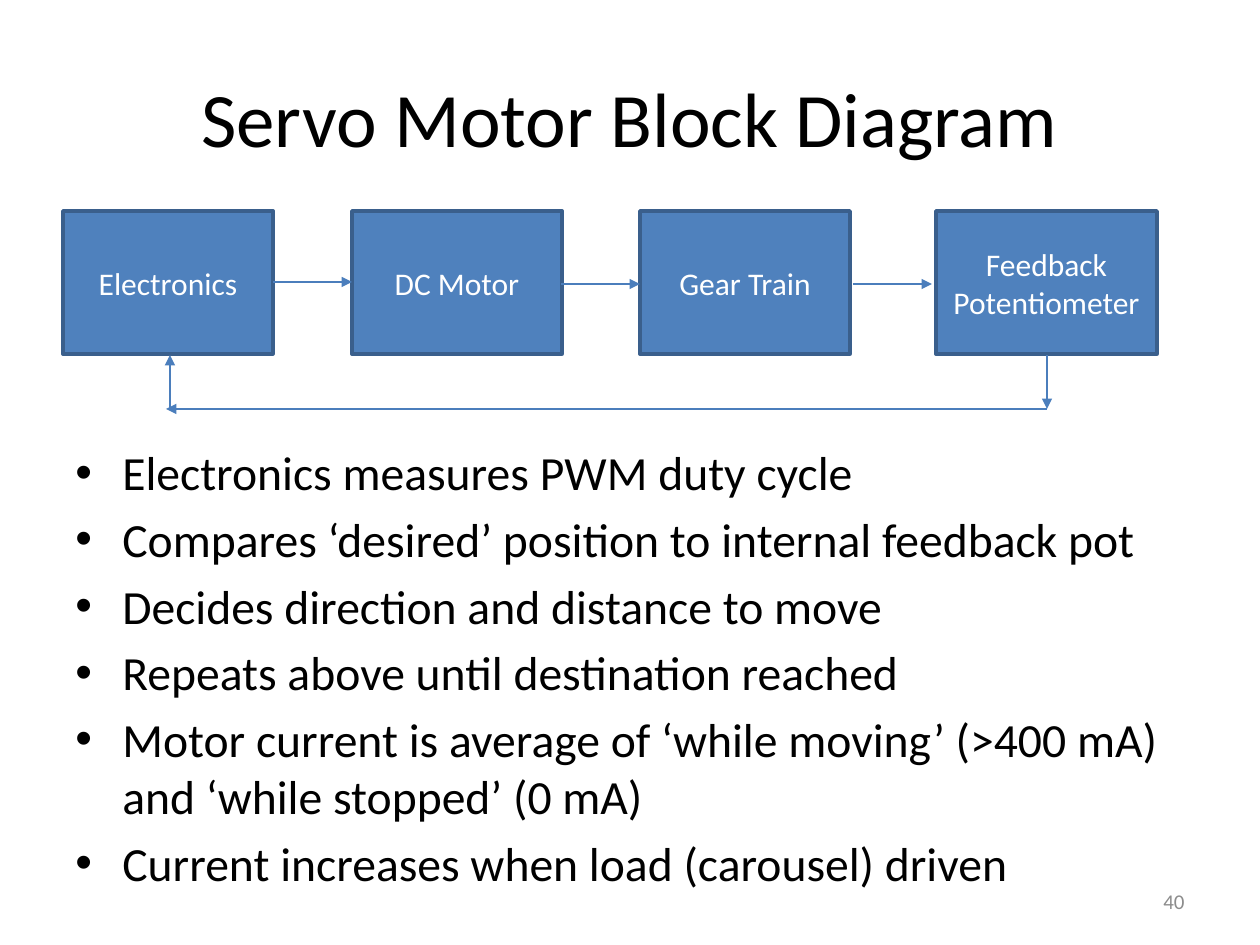
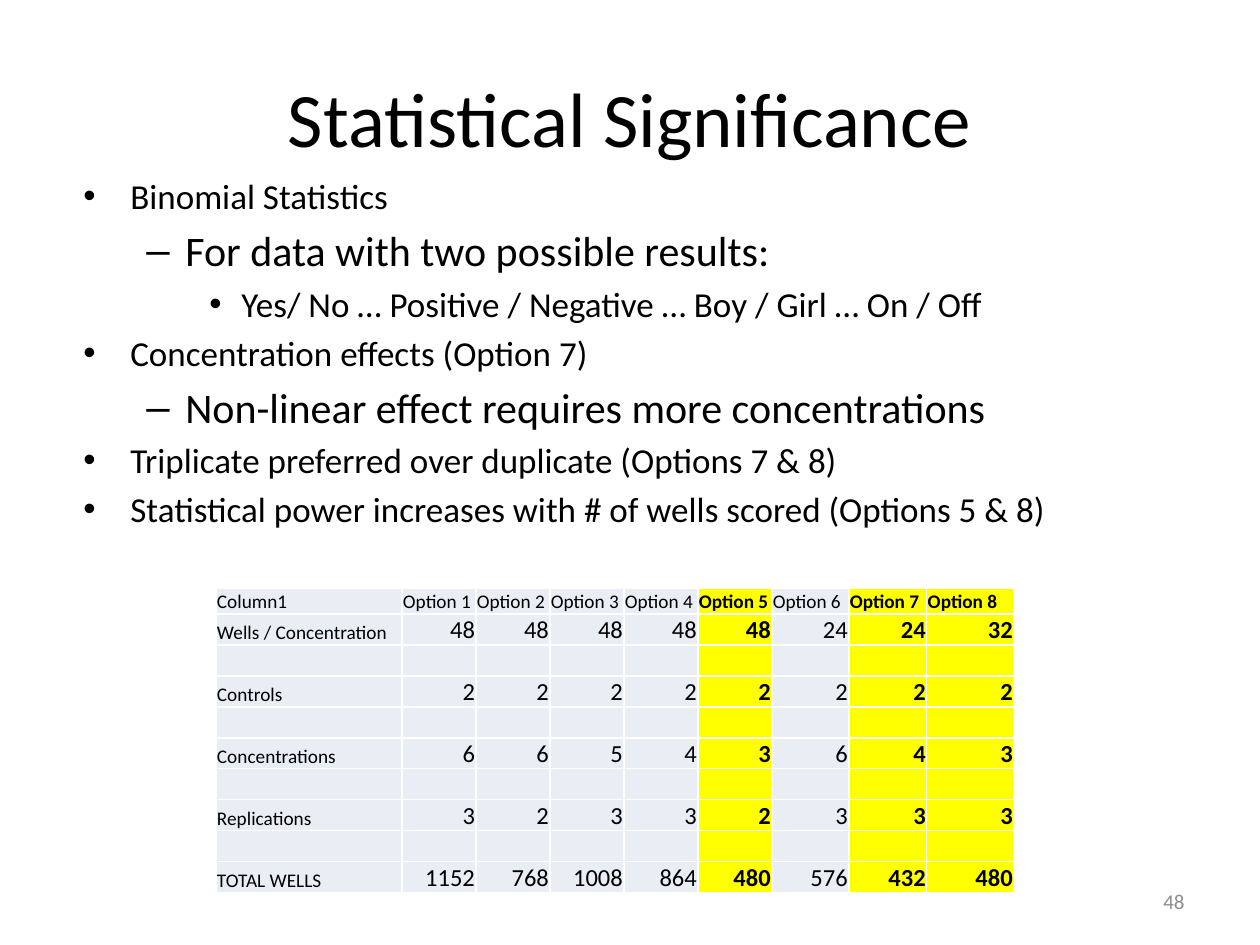
from lxml import etree
from pptx import Presentation
from pptx import util as u
from pptx.dml.color import RGBColor
from pptx.enum import shapes, text
from pptx.oxml import ns

PX = 914400 / 126
FONT = "Calibri"
BLACK = RGBColor(0x00, 0x00, 0x00)
WHITE = RGBColor(0xFF, 0xFF, 0xFF)
GREY = RGBColor(0x8C, 0x8C, 0x8C)
BLOCK_FILL = RGBColor(0x4F, 0x81, 0xBD)
BLOCK_LINE = RGBColor(0x3A, 0x5F, 0x8C)
ARROW = RGBColor(0x4B, 0x7E, 0xBC)
CELL_FILL = RGBColor(0xE9, 0xED, 0xF4)
HIGHLIGHT = RGBColor(0xFF, 0xFF, 0x00)

LEFT, CENTER, RIGHT = text.PP_ALIGN.LEFT, text.PP_ALIGN.CENTER, text.PP_ALIGN.RIGHT
TOP, MIDDLE = text.MSO_ANCHOR.TOP, text.MSO_ANCHOR.MIDDLE

BULLETS = [("•", 47, 47), ("–", 102, 39), ("•", 158, 32)]

BLOCKS = [("Electronics", 63, 210), ("DC Motor", 352, 210),
          ("Gear Train", 640, 210), ("Feedback Potentiometer", 936, 221)]
ARROWS = [(273, 282, 352, 282), (561, 284, 640, 284), (853, 284, 932, 284),
          (1047, 355, 1047, 409), (1047, 409, 166, 409), (170, 409, 170, 355)]
SERVO_POINTS = [(0, 27.2, point) for point in (
    "Electronics measures PWM duty cycle",
    "Compares ‘desired’ position to internal feedback pot",
    "Decides direction and distance to move",
    "Repeats above until destination reached",
    "Motor current is average of ‘while moving’ (>400 mA) and ‘while stopped’ (0 mA)",
    "Current increases when load (carousel) driven")]

STATISTICS_POINTS = [
    (0, 20, "Binomial Statistics"),
    (1, 24, "For data with two possible results:"),
    (2, 20, "Yes/ No … Positive / Negative … Boy / Girl … On / Off"),
    (0, 20, "Concentration effects (Option 7)"),
    (1, 24, "Non-linear effect requires more concentrations"),
    (0, 20, "Triplicate preferred over duplicate (Options 7 & 8)"),
    (0, 20, "Statistical power increases with # of wells scored (Options 5 & 8)")]
WELL_COUNTS = [
    ("Wells / Concentration", 48, 48, 48, 48, 48, 24, 24, 32),
    ("Controls", 2, 2, 2, 2, 2, 2, 2, 2),
    ("Concentrations", 6, 6, 5, 4, 3, 6, 4, 3),
    ("Replications", 3, 2, 3, 3, 2, 3, 3, 3),
    ("TOTAL WELLS", 1152, 768, 1008, 864, 480, 576, 432, 480)]
COLUMN_WIDTHS = [186] + [74] * 5 + [77, 78, 87]
PREFERRED_OPTIONS = (5, 7, 8)


def px(*lengths):
    """Turn pixel lengths into a list of EMU."""
    return [u.Emu(round(length * PX)) for length in lengths]


def write(paragraph, content, size=18, color=BLACK, bold=False, align=LEFT):
    """Put one formatted run into a paragraph."""
    paragraph.alignment = align
    run = paragraph.add_run()
    run.text = content
    run.font.name, run.font.size, run.font.bold = FONT, u.Pt(size), bold
    run.font.color.rgb = color


def add_text_box(slide, box, anchor=TOP):
    """Add an empty wrapping text box and return its text frame."""
    frame = slide.shapes.add_textbox(*px(*box)).text_frame
    frame.word_wrap = True
    frame.vertical_anchor = anchor
    return frame


def add_slide(presentation, title, number):
    """Add a blank slide with its title and slide number."""
    slide = presentation.slides.add_slide(presentation.slide_layouts[6])
    heading = add_text_box(slide, (63, 38, 1134, 157), MIDDLE)
    write(heading.paragraphs[0], title, size=44, align=CENTER)
    footer = add_text_box(slide, (903, 876, 294, 50), MIDDLE)
    write(footer.paragraphs[0], str(number), size=12, color=GREY, align=RIGHT)
    return slide


def add_bullets(slide, box, points):
    """Add a bulleted list of (level, size, content) points."""
    frame = add_text_box(slide, box)
    for index, (level, size, content) in enumerate(points):
        paragraph = frame.add_paragraph() if index else frame.paragraphs[0]
        paragraph.level = level
        character, margin, hanging = BULLETS[level]
        properties = paragraph._p.get_or_add_pPr()
        properties.set("marL", str(px(margin)[0]))
        properties.set("indent", str(-px(hanging)[0]))
        font = etree.SubElement(properties, ns.qn("a:buFont"))
        font.set("typeface", "Arial")
        bullet = etree.SubElement(properties, ns.qn("a:buChar"))
        bullet.set("char", character)
        paragraph.space_before = u.Pt(size * 0.2 if index else 0)
        write(paragraph, content, size=size)


def add_block(slide, label, left, width):
    """Add one labelled block of the diagram."""
    block = slide.shapes.add_shape(shapes.MSO_SHAPE.RECTANGLE, *px(left, 211, width, 143))
    block.shadow.inherit = False
    block.fill.solid()
    block.fill.fore_color.rgb = BLOCK_FILL
    block.line.color.rgb = BLOCK_LINE
    block.line.width = u.Pt(2)
    block.text_frame.word_wrap = True
    block.text_frame.vertical_anchor = MIDDLE
    write(block.text_frame.paragraphs[0], label, color=WHITE, align=CENTER)


def add_arrow(slide, ends):
    """Add a straight arrow pointing at its second end."""
    arrow = slide.shapes.add_connector(shapes.MSO_CONNECTOR.STRAIGHT, *px(*ends))
    arrow.line.color.rgb = ARROW
    arrow.line.width = u.Pt(1.5)
    head = etree.SubElement(arrow.line._get_or_add_ln(), ns.qn("a:tailEnd"))
    head.set("type", "triangle")
    etree.SubElement(arrow._element.spPr, ns.qn("a:effectLst"))


def add_borders(cell):
    """Draw thin white lines on all sides of a cell."""
    properties = cell._tc.get_or_add_tcPr()
    for index, side in enumerate(("lnL", "lnR", "lnT", "lnB")):
        border = etree.Element(ns.qn(f"a:{side}"), w=str(u.Pt(1)))
        fill = etree.SubElement(border, ns.qn("a:solidFill"))
        etree.SubElement(fill, ns.qn("a:srgbClr"), val=str(WHITE))
        properties.insert(index, border)


def fill_cell(cell, content, size, align, preferred):
    """Format a table cell and write its content, if any."""
    cell.fill.solid()
    cell.fill.fore_color.rgb = HIGHLIGHT if preferred else CELL_FILL
    cell.margin_left, cell.margin_right, cell.margin_top, cell.margin_bottom = px(1, 1, 1, 0)
    cell.vertical_anchor = text.MSO_ANCHOR.BOTTOM
    add_borders(cell)
    paragraph = cell.text_frame.paragraphs[0]
    if content == "":
        paragraph._p.get_or_add_endParaRPr().set("sz", str(size * 100))
    else:
        write(paragraph, str(content), size=size, bold=preferred, align=align)


def add_options_table(slide):
    """Add the table of well counts, with a blank row between measures."""
    rows = [["Column1"] + [f"Option {number}" for number in range(1, 9)]]
    for counts in WELL_COUNTS:
        rows += [counts, [""] * len(counts)]
    rows.pop()
    heights = [26] + [31] * (len(rows) - 1)
    box = px(216, 588, sum(COLUMN_WIDTHS), sum(heights))
    table = slide.shapes.add_table(len(rows), len(COLUMN_WIDTHS), *box).table
    table.first_row = table.horz_banding = False
    for column, width in zip(table.columns, px(*COLUMN_WIDTHS)):
        column.width = width
    for row, height in zip(table.rows, px(*heights)):
        row.height = height
    for row_index, row in enumerate(rows):
        for option, content in enumerate(row):
            is_label = row_index == 0 or option == 0
            fill_cell(table.cell(row_index, option), content,
                      size=11 if is_label else 14,
                      align=LEFT if is_label else RIGHT,
                      preferred=option in PREFERRED_OPTIONS)


def main():
    """Build both slides and save the presentation."""
    presentation = Presentation()
    presentation.slide_width, presentation.slide_height = px(1260, 945)

    servo = add_slide(presentation, "Servo Motor Block Diagram", 40)
    for block in BLOCKS:
        add_block(servo, *block)
    for ends in ARROWS:
        add_arrow(servo, ends)
    add_bullets(servo, (63, 437, 1134, 407), SERVO_POINTS)

    statistics = add_slide(presentation, "Statistical Significance", 48)
    add_bullets(statistics, (71, 168, 1134, 624), STATISTICS_POINTS)
    add_options_table(statistics)

    presentation.save("out.pptx")


if __name__ == "__main__":
    main()
